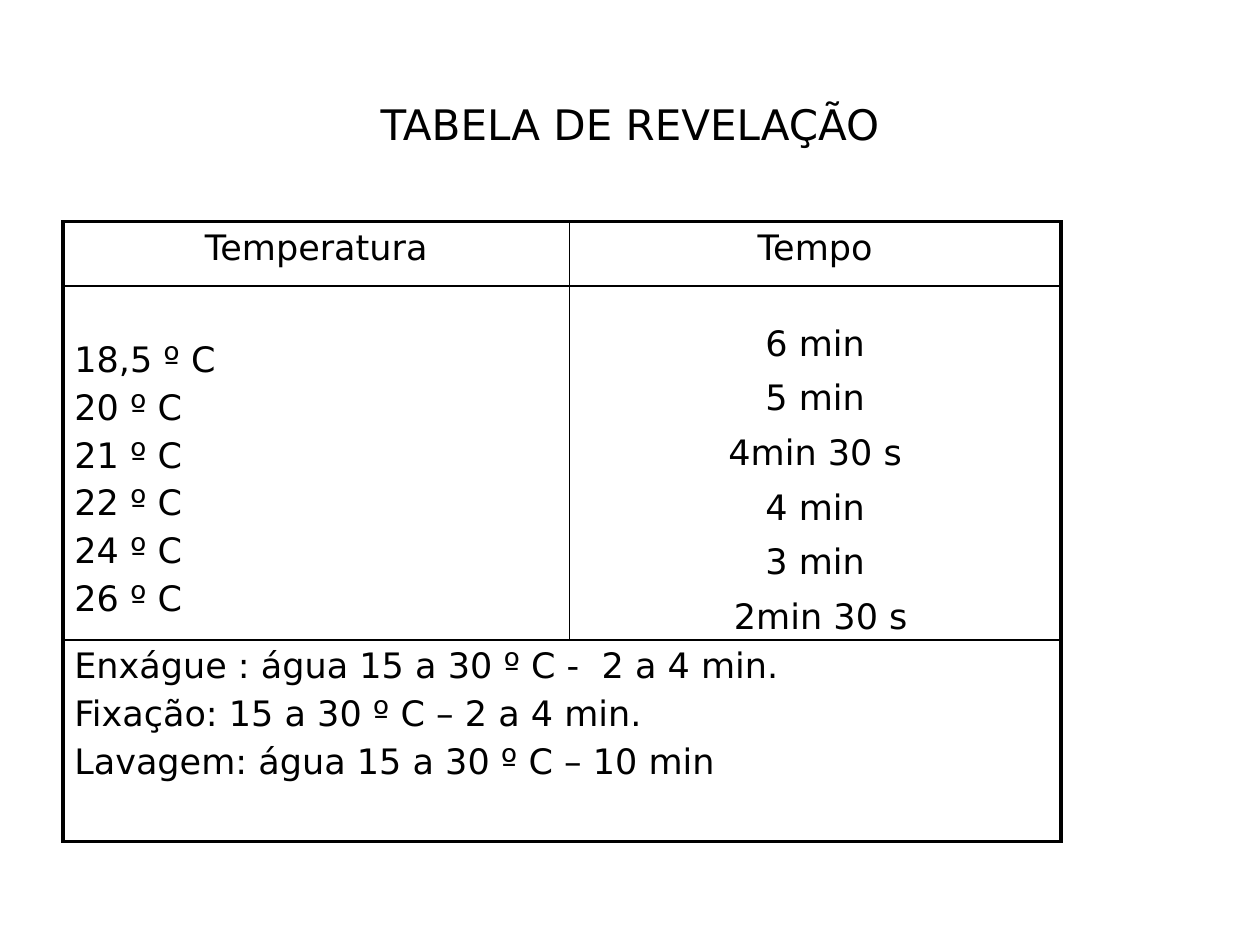
from lxml import etree
from pptx import Presentation
from pptx.dml.color import RGBColor
from pptx.enum import text
from pptx.oxml import ns
from pptx.util import Inches, Pt

BLACK = RGBColor(0x00, 0x00, 0x00)
FONT = "DejaVu Sans"
CENTER, LEFT = text.PP_ALIGN.CENTER, text.PP_ALIGN.LEFT

TITLE = "TABELA DE REVELAÇÃO"
HEADINGS = ["Temperatura", "Tempo"]
TEMPERATURES = ["18,5 º C", "20 º C", "21 º C", "22 º C", "24 º C", "26 º C"]
TIMES = ["6 min", "5 min", "4min 30 s", "4 min", "3 min", " 2min 30 s"]
STEPS = [
    "Enxágue : água 15 a 30 º C -  2 a 4 min.",
    "Fixação: 15 a 30 º C – 2 a 4 min.",
    "Lavagem: água 15 a 30 º C – 10 min",
]
COLUMN_WIDTHS = [4.02, 3.9]
ROW_HEIGHTS = [0.51, 2.81, 1.6]
# row, column, lines, alignment, space between lines (pt), top and bottom margin (in)
CELLS = [
    (0, 0, HEADINGS[:1], CENTER, 0, 0.05, 0.05),
    (0, 1, HEADINGS[1:], CENTER, 0, 0.05, 0.05),
    (1, 0, TEMPERATURES, LEFT, 4, 0.43, 0.05),
    (1, 1, TIMES, CENTER, 7.9, 0.3, 0),
    (2, 0, STEPS, LEFT, 4, 0.05, 0.05),
]
OUTER, INNER = 2.25, 1


def write(frame, lines, size, alignment, gap=0):
    frame.text = "\n".join(lines)
    for index, paragraph in enumerate(frame.paragraphs):
        paragraph.alignment = alignment
        if index:
            paragraph.space_before = Pt(gap)
        for run in paragraph.runs:
            run.font.size = Pt(size)
            run.font.name = FONT
            run.font.color.rgb = BLACK


def draw_borders(cell, row, column):
    """Thick lines on the outside of the table, thin ones inside."""
    last_column = column + cell.span_width == len(COLUMN_WIDTHS)
    edges = {
        "a:lnL": column == 0,
        "a:lnR": last_column,
        "a:lnT": row == 0,
        "a:lnB": row == len(ROW_HEIGHTS) - 1,
    }
    properties = cell._tc.get_or_add_tcPr()
    for tag, is_outer in edges.items():
        line = etree.SubElement(properties, ns.qn(tag), w=str(Pt(OUTER if is_outer else INNER)))
        fill = etree.SubElement(line, ns.qn("a:solidFill"))
        etree.SubElement(fill, ns.qn("a:srgbClr"), val=str(BLACK))


def add_title(slide):
    title = slide.shapes.add_textbox(Inches(2.89), Inches(0.73), Inches(4.22), Inches(0.51))
    title.text_frame.word_wrap = False
    title.text_frame.auto_size = text.MSO_AUTO_SIZE.SHAPE_TO_FIT_TEXT
    write(title.text_frame, [TITLE], 24, CENTER)


def add_development_table(slide):
    table = slide.shapes.add_table(
        len(ROW_HEIGHTS), len(COLUMN_WIDTHS), Inches(0.5), Inches(1.76),
        Inches(sum(COLUMN_WIDTHS)), Inches(sum(ROW_HEIGHTS))).table
    table.first_row = table.horz_banding = False
    for column, width in zip(table.columns, COLUMN_WIDTHS):
        column.width = Inches(width)
    for row, height in zip(table.rows, ROW_HEIGHTS):
        row.height = Inches(height)
    table.cell(2, 0).merge(table.cell(2, 1))

    for row, column, lines, alignment, gap, top, bottom in CELLS:
        cell = table.cell(row, column)
        cell.margin_left = cell.margin_right = Inches(0.09)
        cell.margin_top, cell.margin_bottom = Inches(top), Inches(bottom)
        write(cell.text_frame, lines, 20, alignment, gap)
        draw_borders(cell, row, column)
        cell.fill.background()


def main():
    deck = Presentation()
    deck.slide_width, deck.slide_height = Inches(10), Inches(7.5)
    slide = deck.slides.add_slide(deck.slide_layouts[6])
    add_development_table(slide)
    add_title(slide)
    deck.save("out.pptx")


if __name__ == "__main__":
    main()
